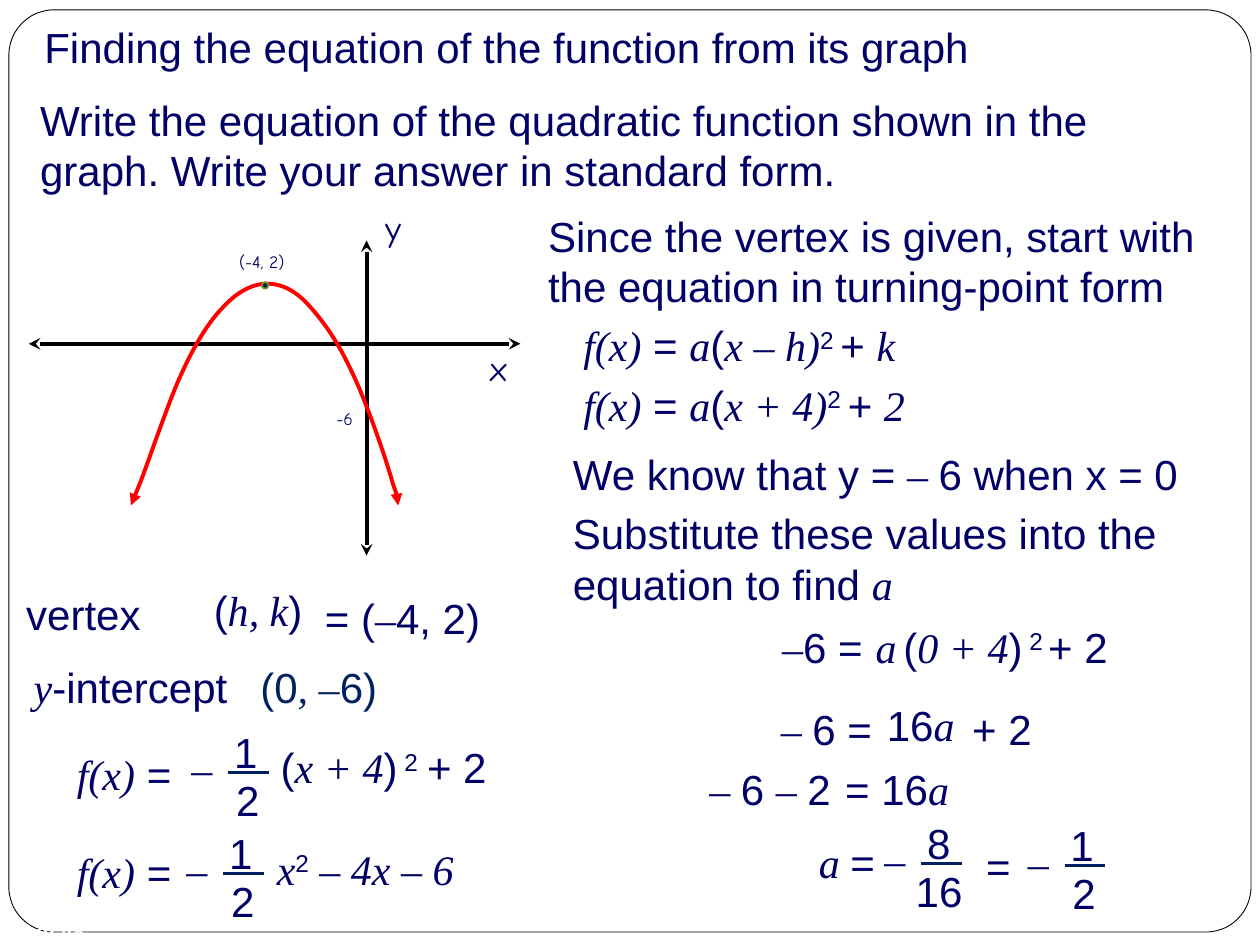
from lxml.etree import SubElement
from pptx import Presentation
from pptx.dml.color import RGBColor
from pptx.enum.shapes import MSO_CONNECTOR, MSO_SHAPE
from pptx.enum.text import MSO_ANCHOR, PP_ALIGN
from pptx.oxml.ns import qn
from pptx.util import Cm, Pt

HEX = {"text": "010066", "deep": "002060", "curve": "FF0000", "axis": "000000",
       "page": "FFFFFF", "ring": "719629"}
SANS, SERIF, HAND = "Arial", "Times New Roman", "Comic Neue"

# Text, left, top, width: _ toggles serif italic, ^ toggles superscript
WORDS = [
    ("Since the vertex is given, start with the equation in turning-point form",
     10.8, 4.11, 14.6),
    ("Write the equation of the quadratic function shown in the graph. "
     "Write your answer in standard form.", 0.56, 1.78, 23.88),
    ("We know that y = _– _6 when x = 0", 11.3, 8.92, 13.1),
    ("Substitute these values into the equation to find _a_", 11.3, 10.11, 13.1),
    ("vertex", 0.28, 11.73, 3.99),
    ("_y_-intercept", 0.43, 13.21, 4.6),
]
MATHS = [
    # Turning-point form
    ("_f(x)_ = _a_(_x – h)_^2 ^+ _k_", 11.51, 6.32, 10.59),
    ("_f(x)_ = _a_(_x + 4)_^2 ^+ _2_", 11.51, 7.52, 10.59),
    # Solving for a
    ("_–_6 =", 15.52, 12.4, 2.39),
    ("_a_", 17.4, 12.4, 0.97),
    ("(_0 + 4_)^ 2^", 17.96, 12.4, 3.53),
    ("+ 2", 20.88, 12.4, 3.1),
    ("_– _6 =", 15.49, 14.05, 2.36),
    ("16_a_", 17.63, 13.97, 2.31),
    ("+ 2", 19.35, 14.05, 3.1),
    ("_– _6 _– _2", 14.05, 15.27, 3.43),
    ("= 16_a_", 16.79, 15.27, 2.62),
    ("_a _=", 16.26, 16.74, 2.08),
    ("=", 19.63, 16.81, 1.24),
    # Answers
    ("_f(x)_ =", 1.3, 14.96, 2.79),
    ("(_x + 4_)^ 2^", 5.41, 14.83, 3.53),
    ("+ 2", 8.36, 14.83, 3.1),
    ("_f(x)_ =", 1.3, 16.94, 2.67),
    ("_x_^2^_ – 4x – 6_", 5.33, 16.87, 4.72),
]
# Top, bottom, bar left, bar height, shift of the bottom
FRACS = [("8", "16", 18.57, 17.4, -0.36), ("1", "2", 21.46, 17.45, -0.09),
         ("1", "2", 4.6, 15.57, -0.09), ("1", "2", 4.5, 17.6, -0.09)]
LABELS = [("(-4, 2)", 4.57, 4.93, 1.73, 10), ("-6", 6.53, 8.1, 1.04, 10),
          ("x", 9.63, 6.86, 0.89, 20), ("y", 7.52, 4.04, 0.89, 20)]
START = (2.64, 10.19)
BENDS = [
    [(2.64, 10.19), (2.64, 10.19), (2.82, 9.75)],
    [(3.0, 9.3), (3.4, 8.08), (3.68, 7.49)],
    [(3.96, 6.88), (4.24, 6.45), (4.52, 6.17)],
    [(4.8, 5.87), (5.11, 5.72), (5.38, 5.72)],
    [(5.66, 5.72), (5.94, 5.84), (6.22, 6.15)],
    [(6.5, 6.45), (6.81, 6.88), (7.09, 7.49)],
    [(7.39, 8.1), (7.8, 9.3), (7.92, 9.75)],
    [(8.08, 10.19), (8.05, 10.19), (8.03, 10.19)],
]


def tint(name):
    return RGBColor.from_string(HEX[name])


def style(font, size, name, color):
    font.size, font.name = Pt(size), name
    font.color.rgb = tint(color)


def fill_text(para, text, color="text"):
    """Turn the marked text into runs."""
    style(para.font, 24, SANS, color)
    slant = raised = False
    part = ""
    for char in text + "\n":
        if char not in "_^\n":
            part += char
            continue
        if part:
            run = para.add_run()
            run.text = part
            style(run.font, 24, SERIF if slant else SANS, color)
            run.font.italic = slant
            if raised:
                run._r.get_or_add_rPr().set("baseline", "30000")
        part = ""
        slant ^= char == "_"
        raised ^= char == "^"


def add_box(slide, x, y, w, h=1.27, wrap=True):
    box = slide.shapes.add_textbox(Cm(x), Cm(y), Cm(w), Cm(h))
    box.text_frame.word_wrap = wrap
    return box.text_frame.paragraphs[0]


def add_text(slide, text, x, y, w, wrap=True, color="text"):
    fill_text(add_box(slide, x, y, w, wrap=wrap), text, color)


def add_label(slide, text, x, y, w, size, name=HAND, color="text", wrap=True):
    para = add_box(slide, x, y, w, 0.7, wrap)
    para.text = text
    style(para.font, size, name, color)
    return para


def add_heads(shape, kind):
    ln = shape.line._get_or_add_ln()
    for end in ("a:headEnd", "a:tailEnd"):
        SubElement(ln, qn(end), type=kind)


def add_line(slide, x1, y1, x2, y2, color, width):
    line = slide.shapes.add_connector(
        MSO_CONNECTOR.STRAIGHT, Cm(x1), Cm(y1), Cm(x2), Cm(y2))
    line.line.color.rgb, line.line.width = tint(color), Pt(width)
    SubElement(line._element.spPr, qn("a:effectLst"))
    return line


def add_shape(slide, kind, x, y, w, h, fill, edge, width):
    shape = slide.shapes.add_shape(kind, Cm(x), Cm(y), Cm(w), Cm(h))
    shape.shadow.inherit = False
    shape.fill.solid()
    shape.fill.fore_color.rgb = tint(fill)
    shape.line.color.rgb, shape.line.width = tint(edge), Pt(width)
    return shape


def add_frac(slide, top, low, x, y, shift):
    """Add a minus sign and a fraction around its bar."""
    add_text(slide, top, x - 0.13, y - 1.05, 1.32)
    add_text(slide, low, x + shift, y - 0.08, 1.9)
    add_text(slide, "_–_", x - 0.99, y - 0.72, 0.79)
    add_line(slide, x, y, x + 0.82, y, "deep", 1.75)


def add_curve(slide, steps=12):
    points, a = [], START
    for b, c, d in BENDS:
        for t in (i / steps for i in range(1, steps + 1)):
            s = 1 - t
            points.append(tuple(
                Cm(s**3 * p + 3 * s * s * t * q + 3 * s * t * t * r + t**3 * e)
                for p, q, r, e in zip(a, b, c, d)))
        a = d
    form = slide.shapes.build_freeform(Cm(START[0]), Cm(START[1]))
    form.add_line_segments(points, close=False)
    curve = form.convert_to_shape()
    curve.shadow.inherit = False
    curve.fill.background()
    curve.line.color.rgb, curve.line.width = tint("curve"), Pt(2.25)
    add_heads(curve, "triangle")


def set_title(slide, text):
    title = slide.shapes.title
    title.left, title.top, title.width, title.height = map(
        Cm, (0.64, 0.3, 24.18, 1.27))
    title.text_frame.vertical_anchor = MSO_ANCHOR.TOP
    para = title.text_frame.paragraphs[0]
    para.alignment = PP_ALIGN.LEFT
    fill_text(para, text)


def main():
    deck = Presentation()
    deck.slide_width, deck.slide_height = Cm(25.4), Cm(19.05)
    slide = deck.slides.add_slide(deck.slide_layouts[5])

    # Frame behind everything, with the page count
    frame = add_shape(slide, MSO_SHAPE.ROUNDED_RECTANGLE, 0.18, 0.2, 25.04, 18.59,
                      "page", "axis", 0.5)
    frame.adjustments[0] = 0.049
    slide.shapes._spTree.insert(2, frame._element)
    count = add_label(slide, " 7 of 48", 0, 18.39, 2.26, 12, SANS, "page", False)
    count.font.bold = True
    set_title(slide, "Finding the equation of the function from its graph")

    # Graph
    for ends in ((7.39, 4.85, 7.39, 11.2), (0.58, 6.93, 10.49, 6.93)):
        add_heads(add_line(slide, *ends, "axis", 2.25), "stealth")
    for label in LABELS:
        add_label(slide, *label)
    add_curve(slide)
    add_shape(slide, MSO_SHAPE.OVAL, 5.28, 5.69, 0.13, 0.13, "deep", "ring", 1)

    # Explanation and working
    for item in WORDS + MATHS:
        add_text(slide, *item)
    add_text(slide, "(_h, k_)", 4.06, 11.66, 2.36, False)
    add_text(slide, "= (_–_4, 2)", 6.3, 11.81, 3.66, False)
    add_text(slide, "(0_, –_6)", 5, 13.21, 2.9, False, "deep")
    for frac in FRACS:
        add_frac(slide, *frac)

    deck.save("out.pptx")


if __name__ == "__main__":
    main()
